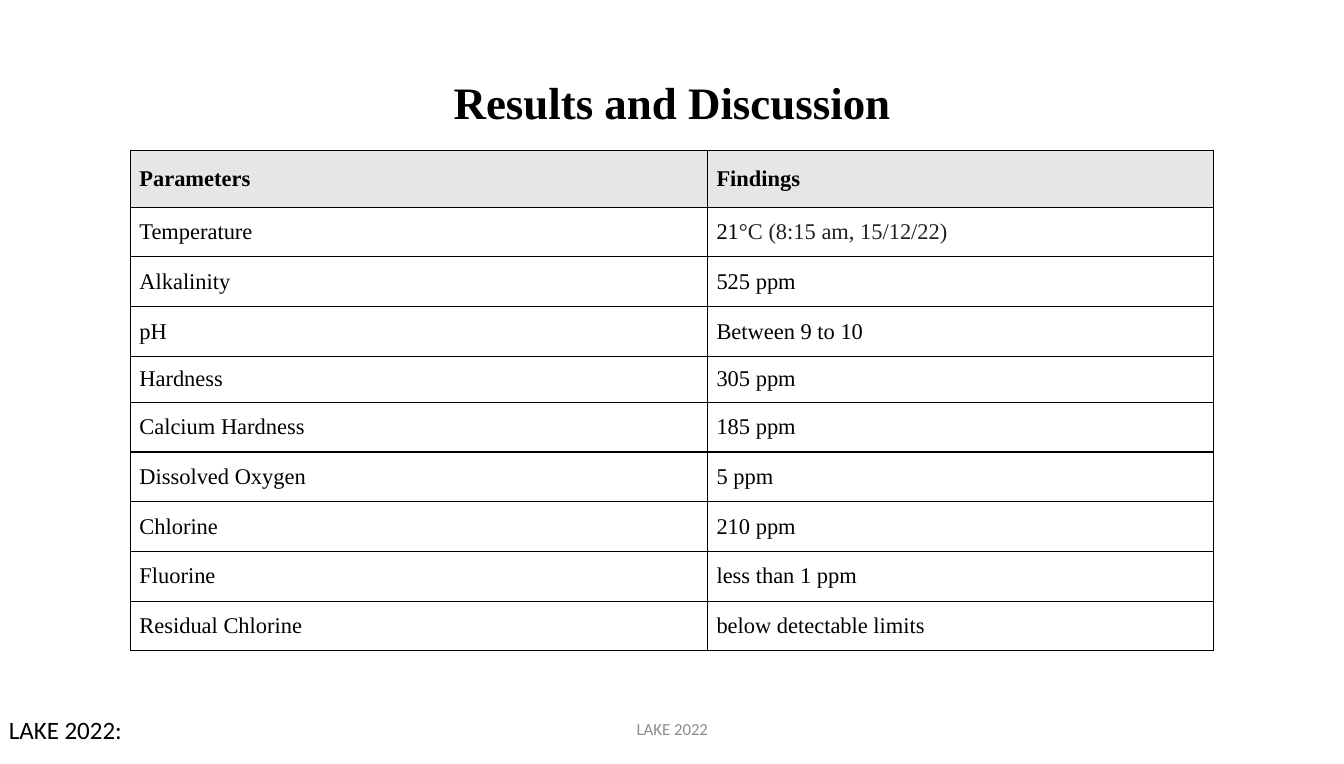
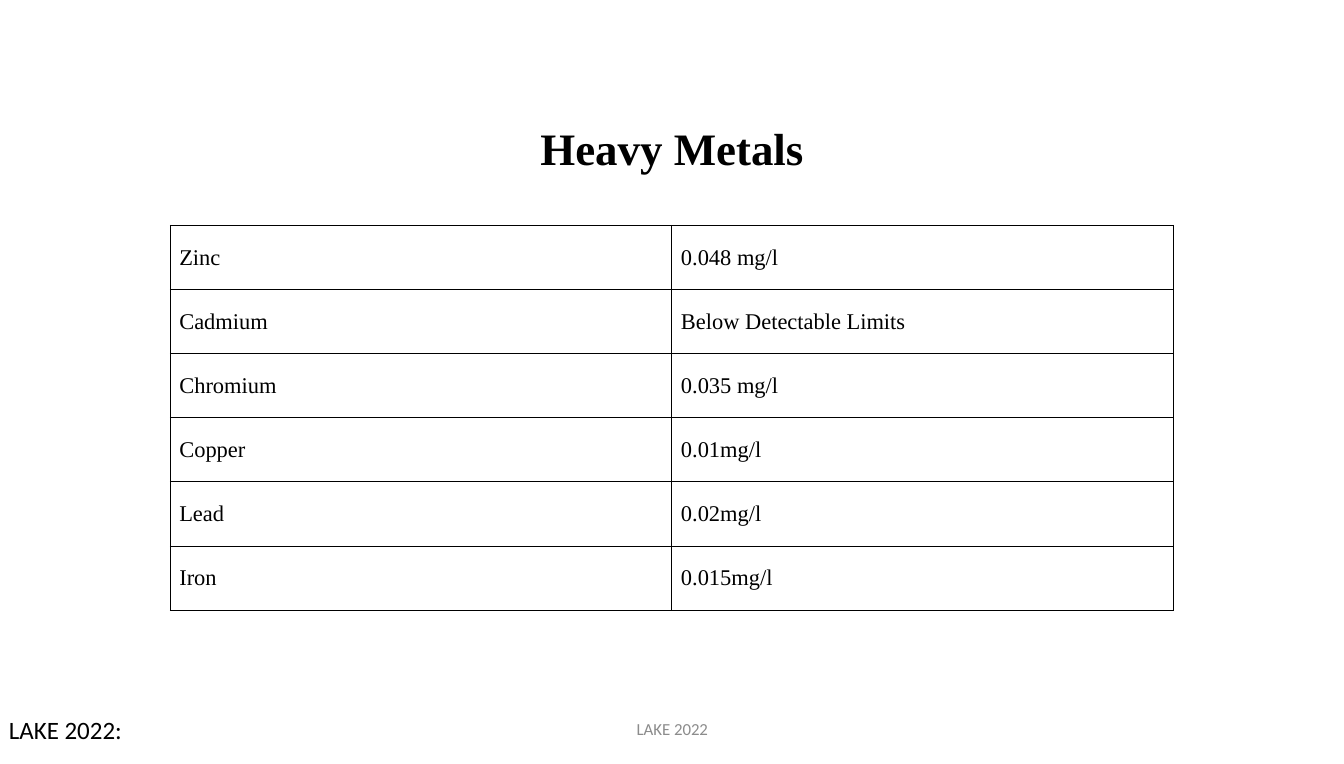
import pptx
import pptx.dml.color
import pptx.enum.text
import pptx.oxml
import pptx.oxml.ns
import pptx.util

Pt = pptx.util.Pt
ALIGN = pptx.enum.text.PP_ALIGN
ANCHOR = pptx.enum.text.MSO_ANCHOR

SLIDE_WIDTH, SLIDE_HEIGHT = 1077, 612
BLACK, WHITE, HEADER_FILL = "000000", "FFFFFF", "E7E6E6"
FOOTER_GRAY, SOFT_BLACK = "8C8C8C", "202124"
SERIF, SANS = "Times New Roman", "Calibri"

TITLE_FONT = {"name": SERIF, "size": Pt(36), "bold": True}
HEADER_FONT = {"name": SERIF, "size": Pt(18), "bold": True}
CELL_FONT = {"name": SERIF, "size": Pt(18), "bold": False}
FOOTER_FONT = {"name": SANS, "size": Pt(13.5)}
LABEL_FONT = {"name": SANS, "size": Pt(20)}

# A cell is a string, or a list of (text, colour) runs.
FINDINGS = [
    ("Parameters", "Findings"),
    ("Temperature", [("21", BLACK), ("°C (8:15 am, 15/12/22)", SOFT_BLACK)]),
    ("Alkalinity", "525 ppm"),
    ("pH", "Between 9 to 10"),
    ("Hardness", "305 ppm"),
    ("Calcium Hardness", "185 ppm"),
    ("Dissolved Oxygen", "5 ppm"),
    ("Chlorine", "210 ppm"),
    ("Fluorine", "less than 1 ppm"),
    ("Residual Chlorine", "below detectable limits"),
]
HEAVY_METALS = [
    ("Zinc", "0.048 mg/l"),
    ("Cadmium", "Below Detectable Limits"),
    ("Chromium", "0.035 mg/l"),
    ("Copper", "0.01mg/l"),
    ("Lead", "0.02mg/l"),
    ("Iron", "0.015mg/l"),
]


def rgb(value):
    return pptx.dml.color.RGBColor.from_string(value)


def set_attributes(target, values):
    for name, value in values.items():
        setattr(target, name, value)


def add_run(paragraph, text, font, color):
    run = paragraph.add_run()
    run.text = text
    set_attributes(run.font, font)
    run.font.color.rgb = rgb(color)


def add_text(slide, box, text, font, color=BLACK, anchor=ANCHOR.MIDDLE, **paragraph_format):
    shape = slide.shapes.add_textbox(*map(Pt, box))
    set_attributes(shape.text_frame, {"word_wrap": True, "vertical_anchor": anchor})
    paragraph = shape.text_frame.paragraphs[0]
    set_attributes(paragraph, paragraph_format)
    add_run(paragraph, text, font, color)


def add_borders(cell):
    properties = cell._tc.get_or_add_tcPr()
    for side in ("lnL", "lnR", "lnT", "lnB"):
        properties.append(pptx.oxml.parse_xml(
            f'<a:{side} {pptx.oxml.ns.nsdecls("a")} w="{Pt(1)}"><a:solidFill>'
            f'<a:srgbClr val="{BLACK}"/></a:solidFill></a:{side}>'))


def fill_cell(cell, content, font, fill):
    add_borders(cell)
    cell.fill.solid()
    cell.fill.fore_color.rgb = rgb(fill)
    margins = {f"margin_{side}": Pt(7.2) for side in ("left", "right", "top", "bottom")}
    set_attributes(cell, {"vertical_anchor": ANCHOR.MIDDLE, **margins})
    runs = [(content, BLACK)] if isinstance(content, str) else content
    for text, color in runs:
        add_run(cell.text_frame.paragraphs[0], text, font, color)


def add_grid(slide, left, top, widths, heights, rows, has_header):
    frame = slide.shapes.add_table(len(rows), len(widths), Pt(left), Pt(top),
                                   Pt(sum(widths)), Pt(sum(heights)))
    table = frame.table
    set_attributes(table, {"first_row": has_header, "horz_banding": False})
    for column, width in zip(table.columns, widths):
        column.width = Pt(width)
    for row, height in zip(table.rows, heights):
        row.height = Pt(height)
    for row_index, row in enumerate(rows):
        is_header = has_header and row_index == 0
        font, fill = (HEADER_FONT, HEADER_FILL) if is_header else (CELL_FONT, WHITE)
        for column_index, content in enumerate(row):
            fill_cell(table.cell(row_index, column_index), content, font, fill)


def add_titled_slide(presentation, title, title_box):
    """Add a blank slide with its title and the shared footers."""
    slide = presentation.slides.add_slide(presentation.slide_layouts[6])
    add_text(slide, title_box, title, TITLE_FONT, alignment=ALIGN.CENTER, line_spacing=0.9)
    add_text(slide, (357, 567.5, 363.5, 32.5), "LAKE 2022", FOOTER_FONT, FOOTER_GRAY,
             alignment=ALIGN.CENTER)
    add_text(slide, (0, 569, 538.5, 31.5), "LAKE 2022:", LABEL_FONT, anchor=ANCHOR.TOP)
    return slide


def main():
    presentation = pptx.Presentation()
    set_attributes(presentation, {"slide_width": Pt(SLIDE_WIDTH), "slide_height": Pt(SLIDE_HEIGHT)})

    slide = add_titled_slide(presentation, "Results and Discussion", (58.5, 56, 960, 56))
    heights = [45.5] + [39.8] * 3 + [36.9] + [39.8] * 5
    add_grid(slide, 104.5, 120.5, [462.5, 405.5], heights, FINDINGS, True)

    slide = add_titled_slide(presentation, "Heavy Metals", (124.5, 69, 828, 104.5))
    heights = [51.4] * len(HEAVY_METALS)
    add_grid(slide, 136.5, 180.5, [402, 402], heights, HEAVY_METALS, False)

    presentation.save("out.pptx")


if __name__ == "__main__":
    main()
